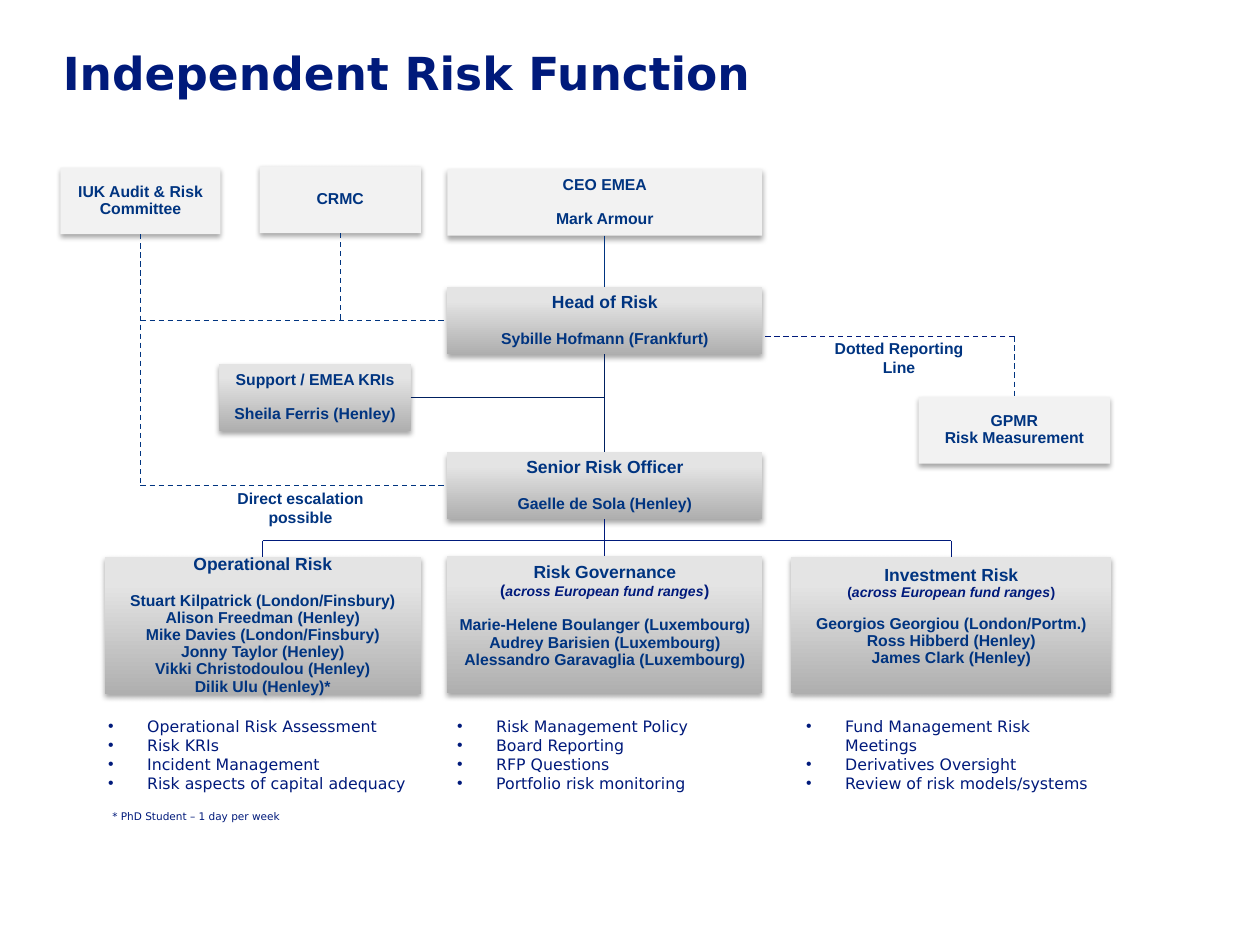
from lxml import etree
from pptx import Presentation
from pptx.dml.color import RGBColor
from pptx.enum.dml import MSO_LINE
from pptx.enum.shapes import MSO_CONNECTOR, MSO_SHAPE
from pptx.enum.text import MSO_ANCHOR, PP_ALIGN
from pptx.oxml.ns import qn
from pptx.util import Inches, Pt

NAVY = RGBColor(0x00, 0x1A, 0x7B)
BLUE = RGBColor(0x00, 0x34, 0x80)
DARK = RGBColor(0x00, 0x20, 0x60)
PALE = RGBColor(0xF2, 0xF2, 0xF2)
GREY = RGBColor(0xAF, 0xAF, 0xAF)
SILVER = RGBColor(0xE4, 0xE4, 0xE4)

RECT = MSO_SHAPE.RECTANGLE
STRAIGHT = MSO_CONNECTOR.STRAIGHT
DASH = MSO_LINE.DASH
MIDDLE = MSO_ANCHOR.MIDDLE
LEFT, CENTER = PP_ALIGN.LEFT, PP_ALIGN.CENTER
TOP_SIDE, LEFT_SIDE, BOTTOM_SIDE, RIGHT_SIDE = range(4)

HEAD = dict(size=Pt(10), name="Arial", bold=True, color=BLUE)
NAME = dict(HEAD, size=Pt(9))
BODY = dict(size=Pt(9), name="DejaVu Sans", color=NAVY)
NOTE = dict(BODY, size=Pt(6))
TITLE = dict(BODY, size=Pt(26), bold=True)

ROW_H = 0.53
BOX_INSET = 0.01


def side_point(box, side):
    """Middle of a box side, in inches."""
    fx, fy = [(0.5, 0), (0, 0.5), (0.5, 1), (1, 0.5)][side]
    return (box.left + box.width * fx) / Inches(1), (box.top + box.height * fy) / Inches(1)


class OrgChart:
    def __init__(self, slide):
        self.shapes = slide.shapes

    def add_runs(self, p, runs):
        for text, fmt in runs:
            r = p.add_run()
            r.text = text
            for key, value in fmt.items():
                if key == "color":
                    r.font.color.rgb = value
                else:
                    setattr(r.font, key, value)

    def paragraphs(self, tf, lines, **fmt):
        """Fill one paragraph for each list of runs and yield it."""
        for i, runs in enumerate(lines):
            p = tf.paragraphs[0] if i == 0 else tf.add_paragraph()
            for key, value in fmt.items():
                setattr(p, key, value)
            self.add_runs(p, runs)
            yield p

    def box(self, x, y, w, h, heading, names=(), gap=0, fill=None, bottom=BOX_INSET):
        """Shadowed box: heading lines, a gap in points, then names."""
        sp = self.shapes.add_shape(RECT, Inches(x), Inches(y), Inches(w), Inches(h))
        sp.line.fill.background()
        if fill:
            sp.fill.solid()
            sp.fill.fore_color.rgb = fill
        else:
            sp.fill.gradient()
            sp.fill.gradient_angle = 90
            for stop, pos, color in zip(sp.fill.gradient_stops, (0, 0.8), (GREY, SILVER)):
                stop.position, stop.color.rgb = pos, color
        self.add_shadow(sp)
        tf = sp.text_frame
        tf.word_wrap = True
        tf.vertical_anchor = MIDDLE
        tf.margin_left = tf.margin_right = tf.margin_top = Inches(BOX_INSET)
        tf.margin_bottom = Inches(bottom)
        lines = heading + [[(name, NAME)] for name in names]
        for i, p in enumerate(self.paragraphs(tf, lines, alignment=CENTER, line_spacing=0.9)):
            if names and i == len(heading):
                p.space_before = Pt(gap)
        return sp

    def add_shadow(self, sp):
        sp.shadow.inherit = False
        effects = sp._element.spPr.find(qn("a:effectLst"))
        shadow = etree.SubElement(effects, qn("a:outerShdw"), blurRad=str(Pt(3.1)),
                                  dist=str(Pt(1.8)), dir="5400000", rotWithShape="0")
        color = etree.SubElement(shadow, qn("a:srgbClr"), val="000000")
        etree.SubElement(color, qn("a:alpha"), val="35000")

    def line(self, start, end, color, dashed=False):
        """Each end is an (x, y) point or a (box, side) pair."""
        ends = [e if isinstance(e[0], (int, float)) else side_point(*e) for e in (start, end)]
        ln = self.shapes.add_connector(STRAIGHT, *[Inches(v) for e in ends for v in e])
        for given, connect in ((start, ln.begin_connect), (end, ln.end_connect)):
            if not isinstance(given[0], (int, float)):
                connect(*given)
        ln.line.color.rgb = color
        ln.line.width = Pt(0.75)
        if dashed:
            ln.line.dash_style = DASH
        etree.SubElement(ln._element.spPr, qn("a:effectLst"))

    def text(self, x, y, w, h, lines, style, align=LEFT, bullet=False, wrap=True):
        tf = self.shapes.add_textbox(Inches(x), Inches(y), Inches(w), Inches(h)).text_frame
        tf.word_wrap = wrap
        for p in self.paragraphs(tf, [[(t, style)] for t in lines], alignment=align):
            if bullet:
                pPr = p._p.get_or_add_pPr()
                pPr.set("marL", str(Inches(0.31)))
                pPr.set("indent", str(-Inches(0.31)))
                etree.SubElement(pPr, qn("a:buFont"), typeface="Arial")
                etree.SubElement(pPr, qn("a:buChar"), char="•")


def heading(text, style=HEAD):
    return [[(text, style)]]


def range_heading(text, size):
    """Heading with the fund range remark below it."""
    bracket = dict(NAME, size=Pt(size), color=NAVY)
    remark = dict(bracket, size=Pt(8), italic=True)
    return heading(text) + [[("(", bracket), ("across European fund ranges", remark), (")", bracket)]]


def main():
    prs = Presentation()
    prs.slide_width, prs.slide_height = Inches(10), Inches(7.5)
    chart = OrgChart(prs.slides.add_slide(prs.slide_layouts[6]))
    box, line, text = chart.box, chart.line, chart.text

    text(0.4, 0.31, 9.27, 1.3, ["Independent Risk Function"], TITLE)

    audit = box(0.48, 1.33, 1.27, ROW_H, heading("IUK Audit & Risk Committee", NAME), fill=PALE)
    crmc = box(2.06, 1.32, 1.28, ROW_H, heading("CRMC", NAME), fill=PALE)
    ceo = box(3.55, 1.34, 2.5, ROW_H, heading("CEO EMEA", NAME), ["Mark Armour"], 9.5, PALE)
    head = box(3.55, 2.28, 2.5, ROW_H, heading("Head of Risk"), ["Sybille Hofmann (Frankfurt)"], 10.5)
    support = box(1.74, 2.89, 1.52, ROW_H, heading("Support / EMEA KRIs", NAME),
                  ["Sheila Ferris (Henley)"], 9.5)
    gpmr = box(7.29, 3.15, 1.52, ROW_H, heading("GPMR", NAME), ["Risk Measurement"], fill=PALE)
    senior = box(3.55, 3.59, 2.5, ROW_H, heading("Senior Risk Officer"), ["Gaelle de Sola (Henley)"], 10.5)
    operational = box(0.83, 4.42, 2.51, 1.09, heading("Operational Risk"), [
        "Stuart Kilpatrick (London/Finsbury)", "Alison Freedman (Henley)",
        "Mike Davies (London/Finsbury)", "Jonny Taylor (Henley)",
        "Vikki Christodoulou (Henley)", "Dilik Ulu (Henley)*"], 10.5)
    governance = box(3.55, 4.41, 2.5, 1.09, range_heading("Risk Governance", 9), [
        "Marie-Helene Boulanger (Luxembourg)", "Audrey Barisien (Luxembourg)",
        "Alessandro Garavaglia (Luxembourg)"], 10, bottom=0.14)
    investment = box(6.28, 4.42, 2.54, 1.08, range_heading("Investment Risk", 8), [
        "Georgios Georgiou (London/Portm.)", "Ross Hibberd (Henley)",
        "James Clark (Henley)"], 8.5, bottom=0.14)

    # Reporting lines
    trunk_x = side_point(head, BOTTOM_SIDE)[0]
    line((ceo, BOTTOM_SIDE), (head, TOP_SIDE), BLUE)
    line((head, BOTTOM_SIDE), (senior, TOP_SIDE), DARK)
    line((support, RIGHT_SIDE), (trunk_x, side_point(support, RIGHT_SIDE)[1]), DARK)
    line((senior, BOTTOM_SIDE), (governance, TOP_SIDE), NAVY)
    bus_y = 4.29
    bus = [(side_point(b, TOP_SIDE)[0], bus_y) for b in (operational, investment)]
    line(*bus, NAVY)
    for corner, b in zip(bus, (operational, investment)):
        line(corner, (b, TOP_SIDE), NAVY)

    # Dotted lines
    audit_x = side_point(audit, BOTTOM_SIDE)[0]
    head_y, senior_y = (side_point(b, LEFT_SIDE)[1] for b in (head, senior))
    line((audit, BOTTOM_SIDE), (audit_x, senior_y), BLUE, True)
    line((crmc, BOTTOM_SIDE), (side_point(crmc, BOTTOM_SIDE)[0], head_y), BLUE, True)
    line((audit_x, head_y), (head, LEFT_SIDE), BLUE, True)
    line((audit_x, senior_y), (senior, LEFT_SIDE), BLUE, True)
    gpmr_corner = (side_point(gpmr, TOP_SIDE)[0], 2.67)
    line(gpmr_corner, (6.05, 2.67), NAVY, True)
    line(gpmr_corner, (gpmr, TOP_SIDE), BLUE, True)

    text(1.57, 3.83, 1.63, 0.4, ["Direct escalation possible"], NAME, CENTER)
    text(6.42, 2.64, 1.43, 0.4, ["Dotted Reporting Line"], NAME, CENTER)

    duties = [
        ["Operational Risk Assessment", "Risk KRIs", "Incident Management",
         "Risk aspects of capital adequacy"],
        ["Risk Management Policy", "Board Reporting", "RFP Questions",
         "Portfolio risk monitoring"],
        ["Fund Management Risk Meetings", "Derivatives Oversight",
         "Review of risk models/systems"],
    ]
    for i, (lines, width) in enumerate(zip(duties, (2.62, 2.51, 2.51))):
        text(0.76 + 2.77 * i, 5.64, width, 0.71, lines, BODY, bullet=True)
    text(0.76, 6.38, 1.59, 0.2, ["* PhD Student – 1 day per week"], NOTE, CENTER, wrap=False)

    prs.save("out.pptx")


if __name__ == "__main__":
    main()
